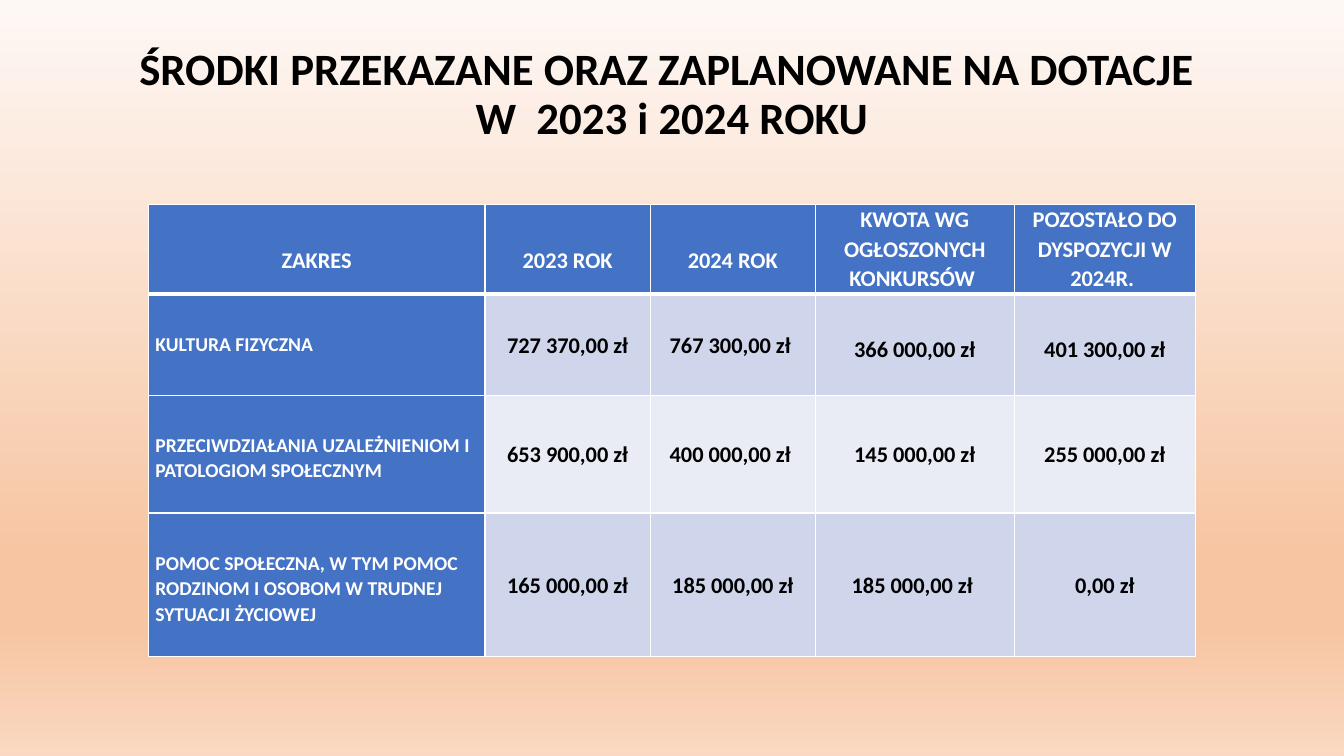
"""Builds a slide with a table of grants paid in 2023 and planned for 2024."""
from lxml import etree
from pptx import Presentation
from pptx.dml.color import RGBColor
from pptx.enum.text import MSO_ANCHOR, PP_ALIGN
from pptx.oxml.ns import qn
from pptx.util import Pt

CENTER, LEFT = PP_ALIGN.CENTER, PP_ALIGN.LEFT
TOP, MIDDLE = MSO_ANCHOR.TOP, MSO_ANCHOR.MIDDLE
COLORS = {
    "title": "000000",
    "amount": "000000",
    "label": "FFFFFF",
    "border": "FFFFFF",
    "heading": "4472C4",
    "odd": "CFD5EA",
    "even": "E9EBF5",
}
BACKGROUND_STOPS = [(0, "FEF8F5"), (74, "F7C5A2"), (83, "F7C5A2"), (100, "FAD8C1")]
COLUMN_WIDTHS = [240.5, 118, 118, 142, 129.5]
ROW_HEIGHTS = [64, 72, 84.25, 102.25]
GRANTS = [
    ["ZAKRES", "2023 ROK", "2024 ROK", "KWOTA WG OGŁOSZONYCH KONKURSÓW ",
     "POZOSTAŁO DO DYSPOZYCJI W 2024R. "],
    ["KULTURA FIZYCZNA ", "727 370,00 zł", "767 300,00 zł ", "366 000,00 zł",
     "401 300,00 zł"],
    ["PRZECIWDZIAŁANIA UZALEŻNIENIOM I PATOLOGIOM SPOŁECZNYM", "653 900,00 zł",
     "400 000,00 zł ", "145 000,00 zł", "255 000,00 zł"],
    ["POMOC SPOŁECZNA, W TYM POMOC RODZINOM I OSOBOM W TRUDNEJ SYTUACJI ŻYCIOWEJ",
     "165 000,00 zł", "185 000,00 zł", "185 000,00 zł ", "0,00 zł"],
]


def style_paragraph(paragraph, size, color, align, spacing):
    paragraph.alignment = align
    paragraph.line_spacing = spacing
    paragraph.font.name = "Calibri"
    paragraph.font.size = Pt(size)
    paragraph.font.bold = True
    paragraph.font.color.rgb = RGBColor.from_string(COLORS[color])


def add_border(cell, side, width, position):
    line = etree.Element(qn(f"a:{side}"), w=str(Pt(width)))
    fill = etree.SubElement(line, qn("a:solidFill"))
    etree.SubElement(fill, qn("a:srgbClr"), val=COLORS["border"])
    cell._tc.get_or_add_tcPr().insert(position, line)


presentation = Presentation()
presentation.slide_width, presentation.slide_height = Pt(960), Pt(540)
slide = presentation.slides.add_slide(presentation.slide_layouts[6])

background = slide.background.fill
background.gradient()
background.gradient_angle = 270
stop_list = slide._element.find(".//" + qn("a:gsLst"))
for default_stop in list(stop_list):
    stop_list.remove(default_stop)
for percent, color in BACKGROUND_STOPS:
    stop = etree.SubElement(stop_list, qn("a:gs"), pos=str(percent * 1000))
    etree.SubElement(stop, qn("a:srgbClr"), val=color)

title = slide.shapes.add_textbox(Pt(66), Pt(28.75), Pt(828), Pt(79.25)).text_frame
title.word_wrap = True
title.vertical_anchor = MIDDLE
heading = title.paragraphs[0]
heading.add_run().text = "ŚRODKI PRZEKAZANE ORAZ ZAPLANOWANE NA DOTACJE "
heading.add_line_break()
heading.add_run().text = "W  2023 i 2024 ROKU"
style_paragraph(heading, 32, "title", CENTER, 0.9)

grants = slide.shapes.add_table(
    len(ROW_HEIGHTS), len(COLUMN_WIDTHS), Pt(106), Pt(146.25),
    Pt(sum(COLUMN_WIDTHS)), Pt(sum(ROW_HEIGHTS))).table
for column, width in zip(grants.columns, COLUMN_WIDTHS):
    column.width = Pt(width)
for row, height in zip(grants.rows, ROW_HEIGHTS):
    row.height = Pt(height)

for r, texts in enumerate(GRANTS):
    for c, text in enumerate(texts):
        cell = grants.cell(r, c)
        is_header, is_scope = r == 0, c == 0
        is_label = is_header or is_scope
        size = 14 if is_scope and not is_header else 16
        is_lowered = is_scope or (is_header and c < 3) or (r == 1 and c >= 3)

        cell.text = text
        paragraph = cell.text_frame.paragraphs[0]
        style_paragraph(paragraph, size, "label" if is_label else "amount",
                        LEFT if is_scope and not is_header else CENTER, 1.07)
        paragraph.space_after = Pt(8)

        cell.vertical_anchor = TOP if is_label or is_lowered else MIDDLE
        cell.margin_left = cell.margin_right = Pt(5)
        cell.margin_top = Pt(size * 1.3 + 8 if is_lowered else 0)
        cell.margin_bottom = Pt(0)

        band = "odd" if r % 2 else "even"
        cell.fill.solid()
        cell.fill.fore_color.rgb = RGBColor.from_string(
            COLORS["heading" if is_label else band])
        border_widths = {"lnL": 1, "lnR": 1, "lnT": 3 if r == 1 else 1,
                         "lnB": 3 if is_header else 1}
        for position, (side, width) in enumerate(border_widths.items()):
            add_border(cell, side, width, position)

presentation.save("out.pptx")
